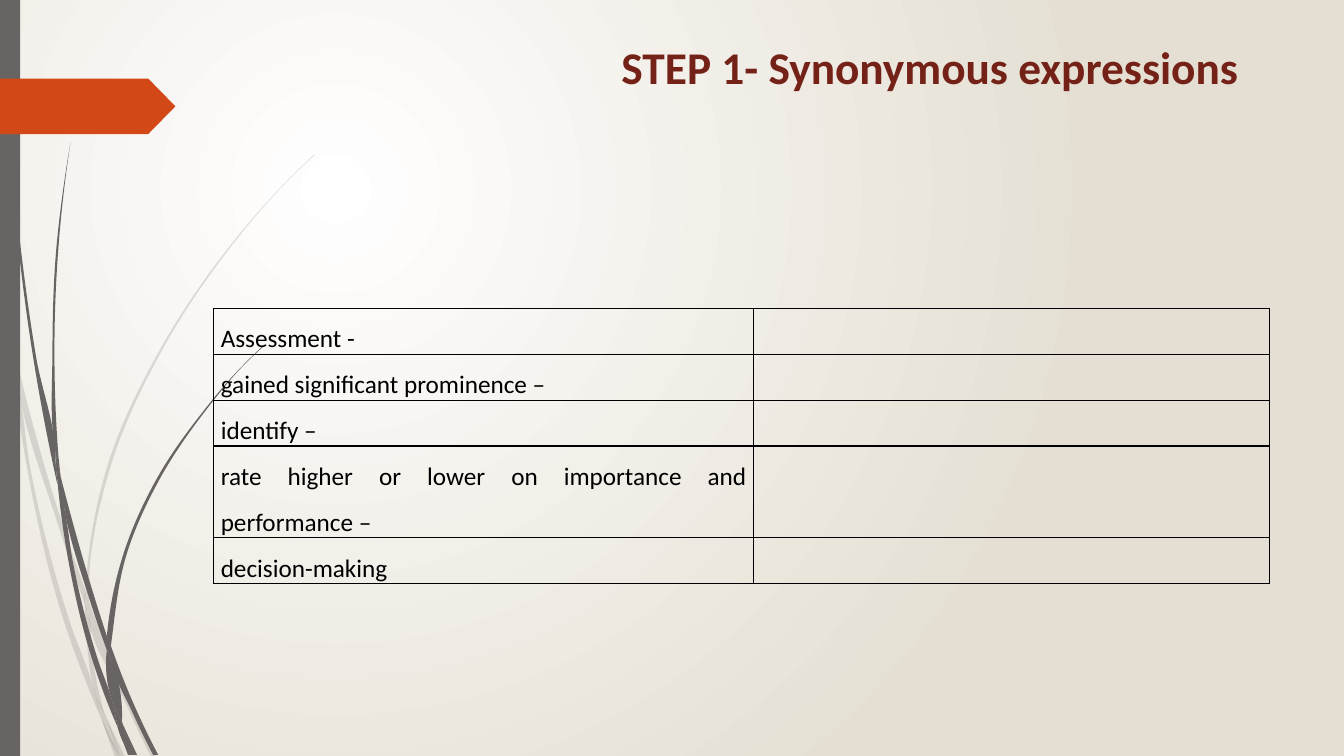
from dataclasses import dataclass
from math import dist

from lxml import etree
from pptx import Presentation
from pptx.dml.color import RGBColor
from pptx.enum.shapes import MSO_SHAPE
from pptx.enum.text import MSO_ANCHOR, PP_ALIGN
from pptx.oxml.ns import qn
from pptx.util import Emu, Pt

CENTER = PP_ALIGN.CENTER
JUSTIFY = PP_ALIGN.JUSTIFY
TOP = MSO_ANCHOR.TOP
RECTANGLE = MSO_SHAPE.RECTANGLE
PENTAGON = MSO_SHAPE.PENTAGON

COLUMNS, ROWS = 1333, 750
GRID_STEP = 9144

Point = tuple[float, float]


@dataclass(frozen=True)
class Theme:
    font: str = "Calibri"
    title_size: float = 32.4
    body_size: float = 18
    border_width: float = 1
    title: RGBColor = RGBColor(0x74, 0x22, 0x17)
    ink: RGBColor = RGBColor(0, 0, 0)
    stem: RGBColor = RGBColor(0x69, 0x64, 0x64)
    banner: RGBColor = RGBColor(0xD3, 0x48, 0x17)
    glow: RGBColor = RGBColor(0xFF, 0xFF, 0xFF)
    sand: RGBColor = RGBColor(0xE5, 0xDF, 0xD3)


@dataclass(frozen=True)
class Area:
    column: float
    row: float
    columns: float
    rows: float

    def emu(self) -> list[Emu]:
        return [grid(n) for n in (self.column, self.row, self.columns, self.rows)]


@dataclass(frozen=True)
class Blade:
    left_edge: list[Point]
    right_edge: list[Point]


@dataclass(frozen=True)
class Expression:
    wording: str
    lines: int = 1


THEME = Theme()
SIDEBAR = Area(0, 0, 20, ROWS)
BANNER = Area(0, 78, 174, 55)
HEADING = Area(536, 34, 773, 88)
EXPRESSIONS_AREA = Area(212, 306, 1047, 273)
EXPRESSION_COLUMNS = (535.5, 511.5)
LINE_ROWS = 45.5

FAINT_BLADES = [
    Blade([(0, 299), (10, 344), (11, 350)], [(9, 322), (0, 282)]),
    Blade([(14, 345), (17, 376), (58, 522), (84, 599)], [(85, 586), (62, 520), (14, 345)]),
    Blade([(88, 596), (88, 610), (123, 694), (150, 751)], [(155, 751), (127, 692), (92, 607)]),
    Blade([(105, 711), (119, 751)], [(124, 751), (105, 711)]),
    Blade([(11, 350), (28, 470), (65, 621), (92, 693), (101, 714)],
          [(99, 707), (93, 683), (70, 619), (31, 469), (17, 376), (11, 350)]),
    Blade([(84, 599), (87, 646), (93, 683), (96, 692), (105, 711)],
          [(103, 706), (91, 646), (88, 610), (84, 599)]),
    Blade([(312, 153), (268, 197), (228, 244), (158, 348), (107, 461), (85, 584)],
          [(88, 596), (88, 584), (110, 462), (160, 349), (229, 245), (268, 198), (312, 154)]),
    Blade([(101, 714), (114, 751)], [(119, 751), (101, 714)]),
    Blade([(85, 586), (84, 599), (88, 608)], [(88, 610), (88, 596)]),
    Blade([(93, 683), (99, 707), (101, 714), (119, 751)], [(119, 751), (105, 711), (96, 692)]),
]
SOLID_BLADES = [
    Blade([(3, 0), (7, 110), (17, 233), (33, 355), (57, 481)],
          [(55, 457), (55, 453), (36, 355), (19, 232), (8, 109), (4, 0)]),
    Blade([(60, 472), (64, 505), (88, 592), (106, 645)], [(106, 631), (93, 590), (60, 472)]),
    Blade([(110, 641), (111, 656), (132, 708), (152, 749)], [(157, 749), (136, 706), (113, 649)]),
    Blade([(57, 477), (68, 557), (93, 659), (111, 708), (117, 722)],
          [(116, 717), (110, 691), (98, 657), (72, 556), (64, 505), (57, 477)]),
    Blade([(70, 141), (62, 193), (56, 245), (52, 349), (55, 449), (60, 472)],
          [(58, 453), (54, 349), (58, 245), (63, 193), (70, 141)]),
    Blade([(122, 719), (133, 749)], [(136, 749), (122, 719)]),
    Blade([(55, 449), (55, 453), (57, 477), (64, 505)], [(60, 472), (55, 449)]),
    Blade([(260, 344), (231, 373), (204, 405), (156, 474), (122, 551), (106, 631)],
          [(110, 641), (111, 633), (125, 552), (158, 476), (205, 406), (245, 359), (261, 344)]),
    Blade([(117, 722), (127, 749)], [(131, 749), (117, 722)]),
    Blade([(106, 645), (110, 691), (116, 706), (122, 719)], [(121, 716), (111, 656), (106, 645)]),
    Blade([(106, 631), (106, 645)], [(111, 656), (110, 641), (106, 631)]),
    Blade([(110, 691), (116, 717), (117, 722), (130, 749)], [(133, 749), (122, 719), (116, 706)]),
]

EXPRESSIONS = [
    Expression("Assessment -"),
    Expression("gained significant prominence –"),
    Expression("identify –"),
    Expression("rate higher or lower on importance and performance –", 2),
    Expression("decision-making"),
]


def grid(count: float) -> Emu:
    return Emu(round(count * GRID_STEP))


def slopes(edge: list[Point]) -> list[Point]:
    spans = [dist(a, b) for a, b in zip(edge, edge[1:])]
    rates = [tuple((q - p) / span for p, q in zip(a, b))
             for a, b, span in zip(edge, edge[1:], spans)]
    inner = [tuple((p * after + q * before) / (before + after) for p, q in zip(r, s))
             for r, s, before, after in zip(rates, rates[1:], spans, spans[1:])]
    if not inner:
        return rates * 2
    first = tuple(2 * r - s for r, s in zip(rates[0], inner[0]))
    last = tuple(2 * r - s for r, s in zip(rates[-1], inner[-1]))
    return [first, *inner, last]


def bend(edge: list[Point]) -> list[list[Point]]:
    tangents = slopes(edge)
    curves = []
    for a, b, leaving, arriving in zip(edge, edge[1:], tangents, tangents[1:]):
        third = dist(a, b) / 3
        curves.append([tuple(p + third * m for p, m in zip(a, leaving)),
                       tuple(p - third * m for p, m in zip(b, arriving)), b])
    return curves


def paint(shape, color: RGBColor, opacity: int = 100) -> None:
    shape.shadow.inherit = False
    shape.line.fill.background()
    shape.fill.solid()
    shape.fill.fore_color.rgb = color
    if opacity < 100:
        tint = shape.fill._xPr.find(".//" + qn("a:srgbClr"))
        etree.SubElement(tint, qn("a:alpha"), val=str(opacity * 1000))


def paint_background(slide) -> None:
    fill = slide.background.fill
    fill.gradient()
    for stop, color in zip(fill.gradient_stops, (THEME.glow, THEME.sand)):
        stop.color.rgb = color
    gradient = slide.element.find(".//" + qn("a:gradFill"))
    gradient.remove(gradient.find(qn("a:lin")))
    circle = etree.SubElement(gradient, qn("a:path"), path="circle")
    etree.SubElement(circle, qn("a:fillToRect"), l="50000", t="50000", r="100000", b="100000")


def draw_blade(slide, blade: Blade, opacity: int) -> None:
    outline = [(grid(x), grid(y)) for x, y in blade.left_edge + blade.right_edge]
    builder = slide.shapes.build_freeform(*outline[0])
    builder.add_line_segments(outline[1:], close=True)
    shape = builder.convert_to_shape()
    sides = [*bend(blade.left_edge), None, *bend(blade.right_edge)]
    for straight, curve in zip(list(shape._element.iter(qn("a:lnTo"))), sides):
        if curve:
            bezier = etree.Element(qn("a:cubicBezTo"))
            for x, y in curve:
                etree.SubElement(bezier, qn("a:pt"), x=str(grid(x) - shape.left),
                                 y=str(grid(y) - shape.top))
            straight.getparent().replace(straight, bezier)
    paint(shape, THEME.stem, opacity)


def write(frame, wording: str, size: float, color: RGBColor, align: PP_ALIGN):
    frame.text = wording
    paragraph = frame.paragraphs[0]
    paragraph.alignment = align
    font = paragraph.runs[0].font
    font.name, font.size, font.color.rgb = THEME.font, Pt(size), color
    return paragraph


def draw_heading(slide) -> None:
    frame = slide.shapes.add_textbox(*HEADING.emu()).text_frame
    frame.word_wrap, frame.vertical_anchor = True, TOP
    heading = write(frame, "STEP 1- Synonymous expressions",
                    THEME.title_size, THEME.title, CENTER)
    heading.runs[0].font.bold = True


def outline_cell(cell) -> None:
    cell.fill.background()
    properties = cell._tc.get_or_add_tcPr()
    for position, side in enumerate(("lnL", "lnR", "lnT", "lnB")):
        border = etree.Element(qn(f"a:{side}"), w=str(Pt(THEME.border_width)))
        ink = etree.SubElement(border, qn("a:solidFill"))
        etree.SubElement(ink, qn("a:srgbClr"), val=str(THEME.ink))
        properties.insert(position, border)


def draw_expressions(slide) -> None:
    table = slide.shapes.add_table(
        len(EXPRESSIONS), len(EXPRESSION_COLUMNS), *EXPRESSIONS_AREA.emu()).table
    table.first_row = table.horz_banding = False
    for column, width in zip(table.columns, EXPRESSION_COLUMNS):
        column.width = grid(width)
    for row, expression in zip(table.rows, EXPRESSIONS):
        row.height = grid(LINE_ROWS * expression.lines)
        for cell in row.cells:
            outline_cell(cell)
        wording = row.cells[0]
        wording.margin_left = wording.margin_right = grid(7)
        wording.margin_top = wording.margin_bottom = 0
        write(wording.text_frame, expression.wording, THEME.body_size,
              THEME.ink, JUSTIFY).line_spacing = 1.5


def main() -> None:
    deck = Presentation()
    deck.slide_width, deck.slide_height = grid(COLUMNS), grid(ROWS)
    slide = deck.slides.add_slide(deck.slide_layouts[6])
    paint_background(slide)
    for blades, opacity in ((FAINT_BLADES, 20), (SOLID_BLADES, 100)):
        for blade in blades:
            draw_blade(slide, blade, opacity)
    paint(slide.shapes.add_shape(RECTANGLE, *SIDEBAR.emu()), THEME.stem)
    banner = slide.shapes.add_shape(PENTAGON, *BANNER.emu())
    banner.adjustments[0] = 0.49
    paint(banner, THEME.banner)
    draw_heading(slide)
    draw_expressions(slide)
    deck.save("out.pptx")


main() if __name__ == "__main__" else None
